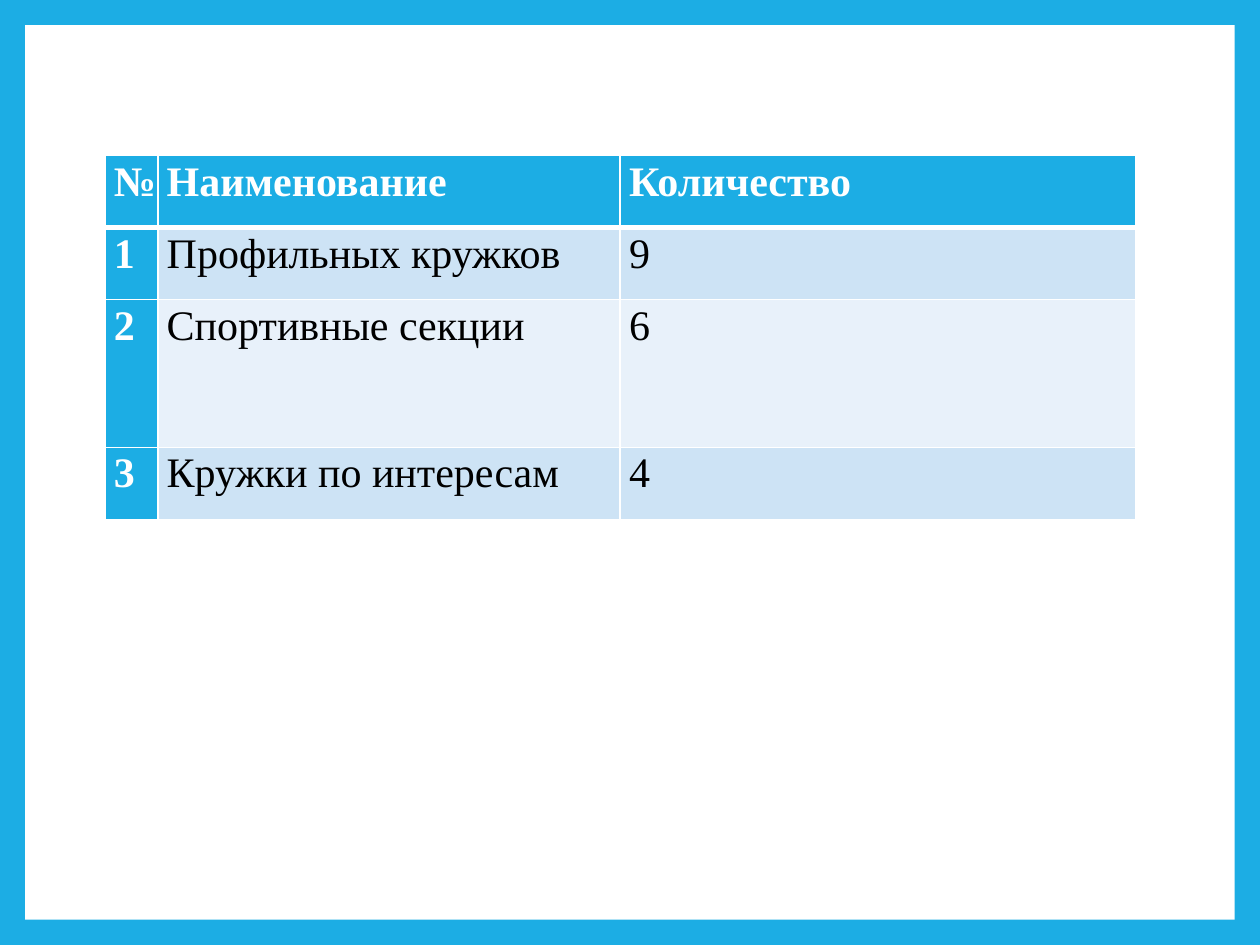
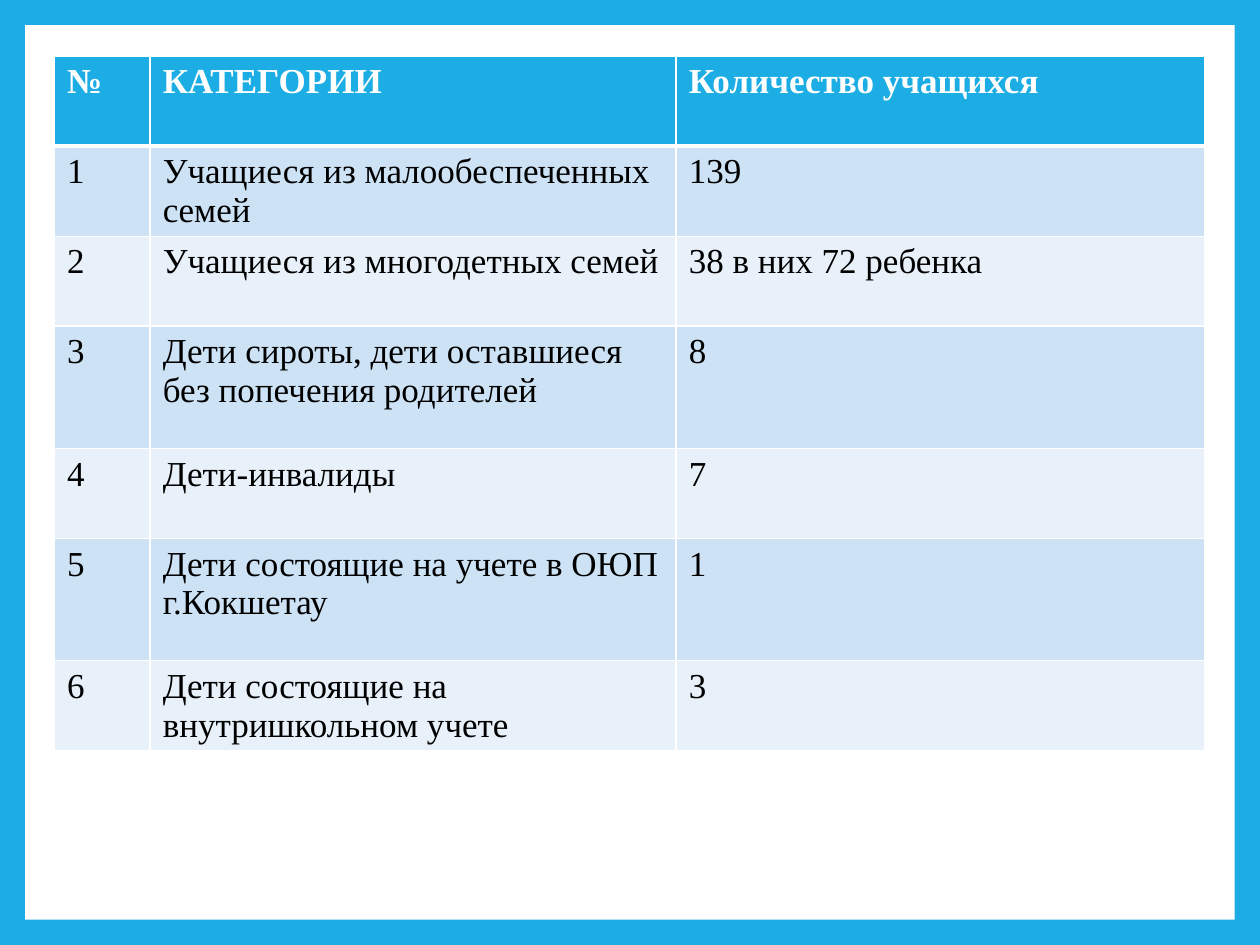
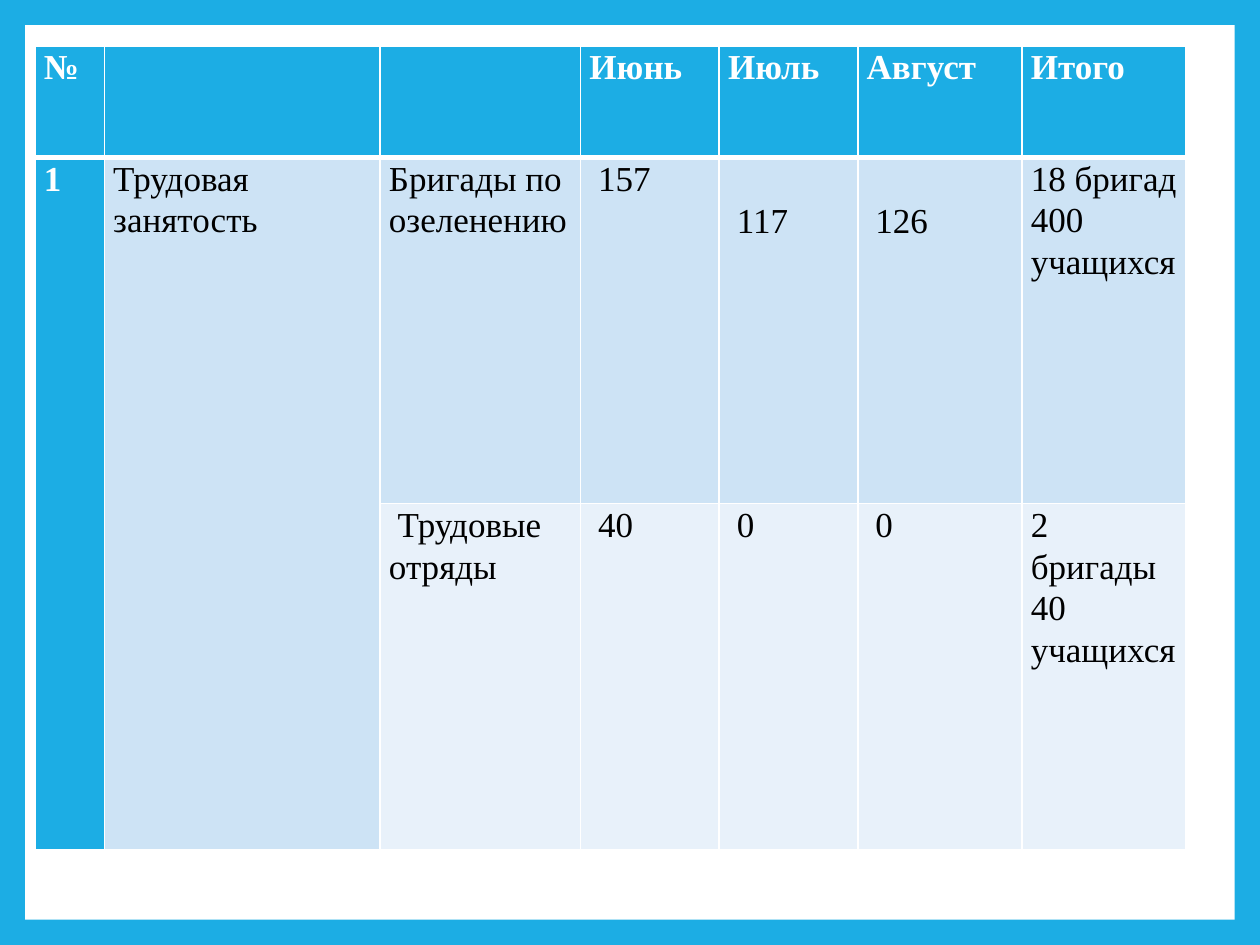
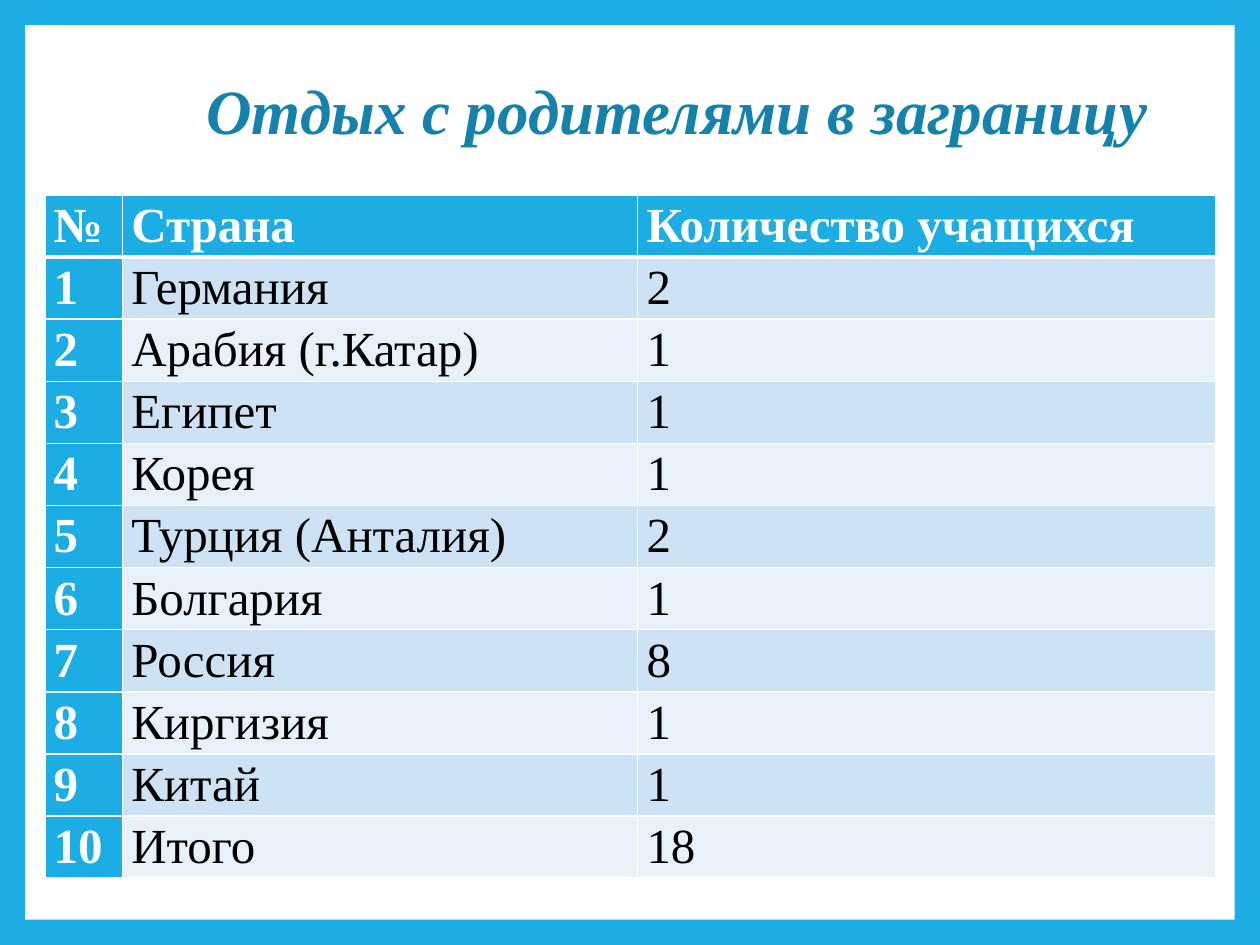
from dataclasses import dataclass

from lxml.etree import SubElement
from pptx import Presentation
from pptx.dml.color import RGBColor as RGB
from pptx.enum.shapes import MSO_SHAPE as SHAPE
from pptx.enum.text import MSO_AUTO_SIZE as AUTO
from pptx.oxml.ns import qn
from pptx.util import Pt


@dataclass(frozen=True)
class Theme:
    font: str = "Times New Roman"
    accent: str = "1CADE4"
    title: str = "1482AC"
    band: tuple = ("CDE3F5", "E8F1FA")
    white: str = "FFFFFF"
    black: str = "000000"
    title_size: float = 36
    thin: float = 1
    thick: float = 3
    slide: tuple = (720, 540)
    frame: float = 14.4


@dataclass(frozen=True)
class Entry:
    """Cell text with a first-line indent and a top offset."""
    text: str
    indent: float = 5
    drop: float = 0


T = Theme()
TIGHT = dict(pad=(5.1, 0), spacing=1.07)
LOOSE = dict(pad=(7.2, 3.6), spacing=1)

# Content: one dict per slide; "\n" starts a new paragraph
COUNTRIES = [
    ("Германия", 2), ("Арабия (г.Катар)", 1), ("Египет", 1), ("Корея", 1),
    ("Турция (Анталия)", 2), ("Болгария", 1), ("Россия", 8),
    ("Киргизия", 1), ("Китай", 1), ("Итого", 18),
]
SLIDES = [
    dict(
        at=(60, 88.8), size=24, first_col=True, **TIGHT,
        cols=[30.2, 264.2, 294.4], heights=[41.2, 41.2, 84.4, 41.2],
        rows=[
            ("№", "Наименование", "Количество"),
            (1, "Профильных кружков", 9),
            (2, "Спортивные секции", 6),
            (3, "Кружки по интересам", 4),
        ],
    ),
    dict(
        at=(31.2, 32), size=20, first_col=False, **LOOSE,
        cols=[54.6, 300.6, 302.2],
        heights=[51.4, 51.4, 51.4, 69.9, 51.4, 69.9, 51.4],
        rows=[
            ("№", "КАТЕГОРИИ", "Количество учащихся"),
            (1, "Учащиеся из малообеспеченных семей", 139),
            (2, "Учащиеся из многодетных семей", "38 в них 72 ребенка"),
            (3, "Дети сироты, дети оставшиеся без попечения родителей", 8),
            (4, "Дети-инвалиды", 7),
            (5, "Дети состоящие на учете в ОЮП г.Кокшетау", 1),
            (6, "Дети состоящие на внутришкольном учете", 3),
        ],
    ),
    dict(
        at=(20, 26.2), size=20, first_col=True, **TIGHT,
        cols=[39.6, 157.6, 114.6, 79.2, 79.2, 93.8, 93.8],
        heights=[63.8, 197.8, 197.8],
        merges=[(1, 0, 2, 0), (1, 1, 2, 1)],
        rows=[
            ("№", "", "", "Июнь", "Июль", "Август", "Итого"),
            (1, "Трудовая занятость", "Бригады по озеленению",
             Entry("157"), Entry("117", drop=23.8), Entry("126", drop=23.8),
             "18 бригад\n400 учащихся"),
            ("", "", Entry("Трудовые отряды"), Entry("40"), Entry("0"),
             Entry("0"), "2 бригады\n40 учащихся"),
        ],
    ),
    dict(
        title="Отдых с родителями в заграницу",
        title_box=(110.9, 37.4, 571.7, 51),
        at=(25.6, 111.4), size=28, first_col=True, **TIGHT,
        cols=[44.4, 294.4, 330.2], heights=[35.5] * 11,
        rows=[("№", "Страна", "Количество учащихся")]
        + [(n, *country) for n, country in enumerate(COUNTRIES, 1)],
    ),
]


def points(values):
    return [Pt(v) for v in values]


def paint(fill, color):
    fill.solid()
    fill.fore_color.rgb = RGB.from_string(color)


def add_run(p, text, size, color, bold, italic=False):
    r = p.add_run()
    r.text = text
    f = r.font
    f.name, f.size, f.bold, f.italic = T.font, Pt(size), bold, italic
    f.color.rgb = RGB.from_string(color)


def add_borders(cell, top, bottom):
    tc_pr = cell._tc.get_or_add_tcPr()
    sides = dict(lnL=T.thin, lnR=T.thin, lnT=top, lnB=bottom)
    for i, (tag, width) in enumerate(sides.items()):
        ln = SubElement(tc_pr, qn(f"a:{tag}"), w=str(Pt(width)))
        fill = SubElement(ln, qn("a:solidFill"))
        SubElement(fill, qn("a:srgbClr"), val=T.white)
        tc_pr.insert(i, ln)


def fill_cell(cell, value, spec, strong):
    entry = value if isinstance(value, Entry) else Entry(str(value), 0)
    side, edge = spec["pad"]
    cell.margin_left = cell.margin_right = Pt(side)
    cell.margin_top, cell.margin_bottom = Pt(edge + entry.drop), Pt(edge)
    if not entry.text:
        return
    tf = cell.text_frame
    for i, line in enumerate(entry.text.split("\n")):
        p = tf.add_paragraph() if i else tf.paragraphs[0]
        p.line_spacing = spec["spacing"]
        if entry.indent:
            p._p.get_or_add_pPr().set("indent", str(Pt(entry.indent)))
        add_run(p, line, spec["size"], T.white if strong else T.black, strong)


def add_grid(slide, spec):
    cols, heights = spec["cols"], spec["heights"]
    box = points((*spec["at"], sum(cols), sum(heights)))
    table = slide.shapes.add_table(len(heights), len(cols), *box).table
    table.first_col, table.horz_banding = spec["first_col"], False
    for col, width in zip(table.columns, cols):
        col.width = Pt(width)
    for row, height in zip(table.rows, heights):
        row.height = Pt(height)
    for r, values in enumerate(spec["rows"]):
        for c, value in enumerate(values):
            cell = table.cell(r, c)
            strong = r == 0 or (c == 0 and spec["first_col"])
            paint(cell.fill, T.accent if strong else T.band[(r - 1) % 2])
            add_borders(cell, T.thick if r == 1 else T.thin,
                        T.thick if r == 0 else T.thin)
            fill_cell(cell, value, spec, strong)
    for r1, c1, r2, c2 in spec.get("merges", []):
        table.cell(r1, c1).merge(table.cell(r2, c2))


def add_title(slide, text, box):
    tf = slide.shapes.add_textbox(*points(box)).text_frame
    tf.word_wrap, tf.auto_size = False, AUTO.SHAPE_TO_FIT_TEXT
    add_run(tf.paragraphs[0], text, T.title_size, T.title, True, True)


def add_panel(slide):
    w, h = T.slide
    box = points((T.frame, T.frame, w - 2 * T.frame, h - 2 * T.frame))
    sp = slide.shapes.add_shape(SHAPE.RECTANGLE, *box)
    sp.shadow.inherit = False
    paint(sp.fill, T.white)
    sp.line.fill.background()


def main():
    prs = Presentation()
    prs.slide_width, prs.slide_height = points(T.slide)
    paint(prs.slide_master.background.fill, T.accent)
    for spec in SLIDES:
        slide = prs.slides.add_slide(prs.slide_layouts[6])
        add_panel(slide)
        add_grid(slide, spec)
        if "title" in spec:
            add_title(slide, spec["title"], spec["title_box"])
    prs.save("out.pptx")


if __name__ == "__main__":
    main()
